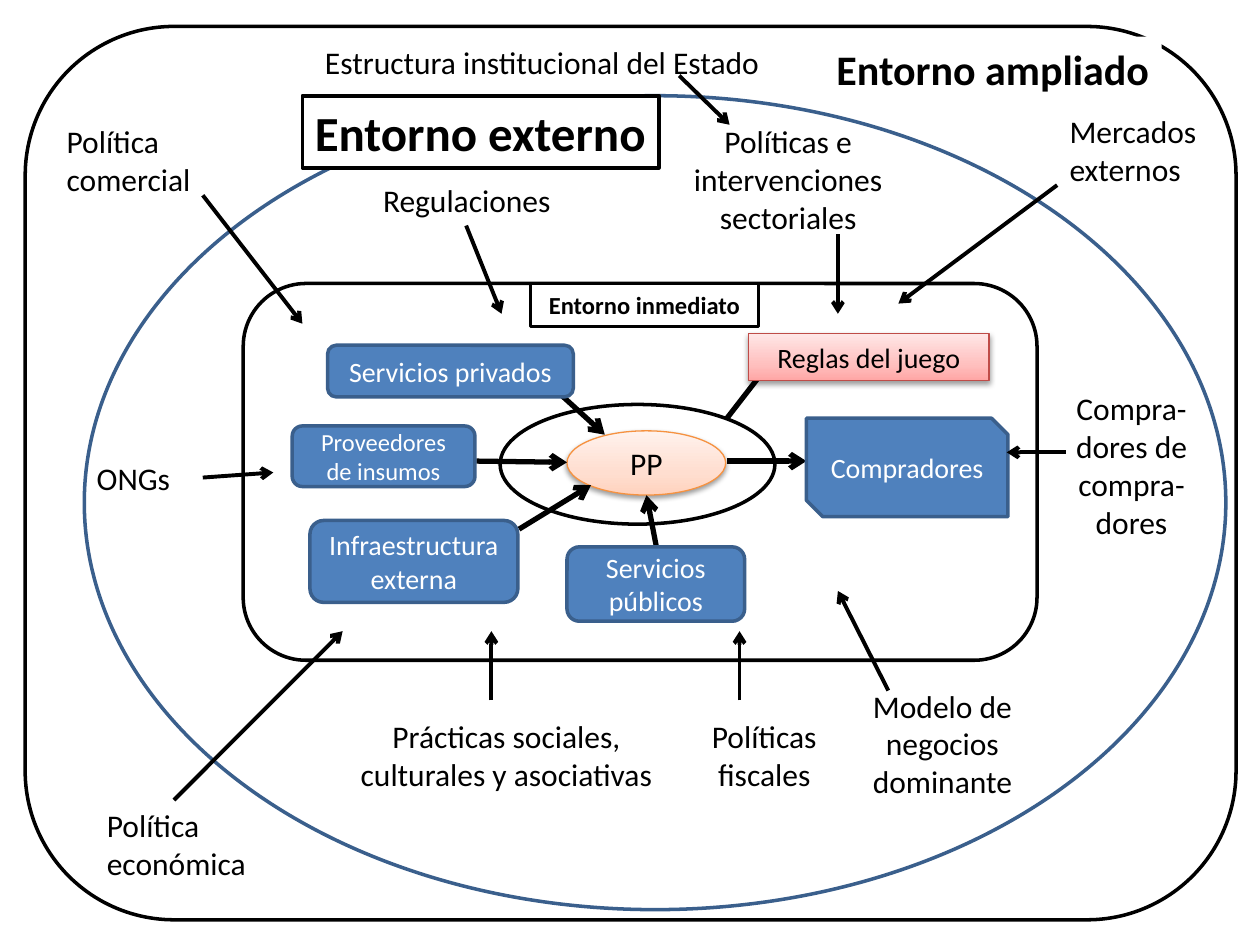
from lxml import etree
from pptx import Presentation
from pptx.dml.color import RGBColor
from pptx.enum.shapes import MSO_CONNECTOR as Connector, MSO_SHAPE as Shape
from pptx.enum.text import MSO_ANCHOR as Anchor, PP_ALIGN as Align
from pptx.oxml import parse_xml
from pptx.oxml.ns import nsdecls, qn
from pptx.util import Pt

BLACK, WHITE = "000000", "FFFFFF"
BLUE, NAVY = "4F81BD", "3A5F8C"
PEACH = ("FFD2BD", "FFDED0", "FFF2ED")
ROSE = ("FFA6A5", "FFC0BF", "FFE7E7")


def color(code):
    return RGBColor.from_string(code)


def write(frame, text, size=18, ink=BLACK, bold=False, align=Align.CENTER,
          anchor=Anchor.MIDDLE, wrap=True):
    frame.word_wrap = wrap
    frame.vertical_anchor = anchor
    paragraph = frame.paragraphs[0]
    paragraph.alignment = align
    run = paragraph.add_run()
    run.text = text
    run.font.name = "Calibri"
    run.font.size = Pt(size)
    run.font.bold = bold
    run.font.color.rgb = color(ink)


class Diagram:
    def __init__(self, slide):
        self.shapes = slide.shapes

    def outline(self, kind, box, fill=None, line=BLACK, weight=2):
        shape = self.shapes.add_shape(kind, *map(Pt, box))
        shape.shadow.inherit = False
        if fill:
            shape.fill.solid()
            shape.fill.fore_color.rgb = color(fill)
        else:
            shape.fill.background()
        if line:
            shape.line.color.rgb = color(line)
            shape.line.width = Pt(weight)
        else:
            shape.line.fill.background()
        return shape

    def panel(self, kind, box, text, fill=WHITE, line=BLACK, **style):
        write(self.outline(kind, box, fill, line).text_frame, text, **style)

    def glow(self, kind, box, text, shades, line, size):
        """Shape with a vertical three-stop gradient and a soft shadow."""
        shape = self.outline(kind, box, shades[0], line, 0.75)
        props = shape.fill._xPr
        stops = "".join(
            f'<a:gs pos="{pos}"><a:srgbClr val="{shade}"/></a:gs>'
            for pos, shade in zip((0, 35000, 100000), shades))
        props.replace(props.find(qn("a:solidFill")), parse_xml(
            f'<a:gradFill {nsdecls("a")} rotWithShape="1"><a:gsLst>{stops}</a:gsLst>'
            '<a:lin ang="16200000" scaled="1"/></a:gradFill>'))
        props.find(qn("a:effectLst")).append(parse_xml(
            f'<a:outerShdw {nsdecls("a")} blurRad="{Pt(3.1)}" dist="{Pt(1.6)}" '
            'dir="5400000" rotWithShape="0"><a:srgbClr val="000000">'
            '<a:alpha val="38000"/></a:srgbClr></a:outerShdw>'))
        write(shape.text_frame, text, size=size)

    def label(self, box, text, align=Align.CENTER):
        frame = self.shapes.add_textbox(*map(Pt, box)).text_frame
        write(frame, text, align=align, anchor=Anchor.TOP)

    def link(self, ends, weight=2.25, arrow=True):
        link = self.shapes.add_connector(Connector.STRAIGHT, *map(Pt, ends))
        link.line.color.rgb = color(BLACK)
        link.line.width = Pt(weight)
        if arrow:
            etree.SubElement(link.line._get_or_add_ln(), qn("a:tailEnd"), type="arrow")
        etree.SubElement(link._element.spPr, qn("a:effectLst"))


def main():
    deck = Presentation()
    deck.slide_width, deck.slide_height = Pt(720), Pt(540)
    diagram = Diagram(deck.slides.add_slide(deck.slide_layouts[6]))

    # Core: PP and its direct links
    diagram.glow(Shape.OVAL, (324, 246.2, 90.7, 36.7), "PP", PEACH, "F69240", 18)
    for ends in (
        (321.1, 226.1, 345.6, 248.4),
        (272.2, 263.5, 324, 264.2),
        (296.6, 302.4, 337.7, 277.2),
        (375.1, 312.5, 369.4, 283),
        (415.4, 263.5, 460.8, 263.5),
    ):
        diagram.link(ends, weight=3)

    # Actors around PP
    rounded, snipped = Shape.ROUNDED_RECTANGLE, Shape.SNIP_2_DIAG_RECTANGLE
    for kind, box, actor, size in (
        (rounded, (187.2, 197.3, 140.4, 29.5), "Servicios privados", 16),
        (rounded, (167, 243.4, 104.4, 34.6), "Proveedores de insumos", 14),
        (rounded, (177.1, 297.4, 118.8, 46.8), "Infraestructura externa", 16),
        (rounded, (324, 312.5, 101.5, 42.5), "Servicios públicos", 16),
        (snipped, (460.8, 239, 115.2, 56.2), "Compradores", 16),
    ):
        diagram.panel(kind, box, actor, BLUE, NAVY, size=size, ink=WHITE)

    # Rules of the game, tied to the ring around PP
    diagram.outline(Shape.OVAL, (285.8, 231.1, 157, 68.4))
    diagram.link((415.4, 239, 432.7, 216.7), weight=3, arrow=False)
    diagram.glow(Shape.RECTANGLE, (427.7, 190.8, 137.5, 26.6),
                 "Reglas del juego", ROSE, "BF4C48", 16)

    # Borders of the three environments
    diagram.outline(rounded, (139, 162, 453.6, 215.3))
    diagram.outline(Shape.OVAL, (48.2, 54.7, 652.3, 465.1), line=NAVY)
    diagram.outline(rounded, (14.4, 15.1, 691.9, 510.5))

    # Names of the environments
    diagram.panel(Shape.RECTANGLE, (172.8, 54.7, 203.8, 41.2), "Entorno externo",
                  size=28, bold=True, align=Align.LEFT, wrap=False)
    diagram.panel(Shape.RECTANGLE, (462.2, 20.9, 201.6, 36.4), "Entorno ampliado",
                  line=None, size=24, bold=True, align=Align.RIGHT)
    diagram.panel(Shape.RECTANGLE, (303.1, 162, 130.3, 24.5), "Entorno inmediato",
                  size=14, bold=True)

    # Factors in the outer environments
    for box, factor in (
        ((201.6, 100.1, 130.3, 29.1), "Regulaciones"),
        ((388.1, 66.2, 124.6, 72.7), "Políticas e intervenciones sectoriales"),
        ((195.8, 406.1, 187.2, 50.9), "Prácticas sociales, culturales y asociativas"),
        ((377.3, 406.1, 118.8, 50.9), "Políticas fiscales"),
        ((592.6, 218.9, 108, 94.5), "Compra-dores de compra-dores"),
        ((490.3, 388.8, 96.5, 72.7), "Modelo de negocios dominante"),
    ):
        diagram.label(box, factor)
    for box, factor in (
        ((48.2, 258.5, 67.7, 29.1), "ONGs"),
        ((31, 66.2, 108, 50.9), "Política comercial"),
        ((54, 457.2, 141.8, 50.9), "Política económica"),
        ((178.6, 20.9, 311.8, 29.1), "Estructura institucional del Estado"),
        ((604.1, 60.5, 90.7, 50.9), "Mercados externos"),
    ):
        diagram.label(box, factor, Align.LEFT)

    # Influence arrows pointing inwards
    for ends in (
        (266.4, 128.9, 286.6, 179.3),
        (115.9, 272.9, 156.2, 270),
        (478.8, 133.9, 478.8, 179.3),
        (280.8, 400.3, 280.8, 360.7),
        (422.6, 400.3, 422.6, 360.7),
        (115.9, 111.6, 172.8, 185),
        (99.4, 457.2, 195.8, 360.7),
        (388.1, 43.2, 416.9, 71.3),
        (604.1, 105.8, 513.4, 173.5),
        (609.1, 258.5, 575.3, 258.5),
        (507.6, 394.6, 478.8, 337.7),
    ):
        diagram.link(ends)

    deck.save("out.pptx")


if __name__ == "__main__":
    main()
